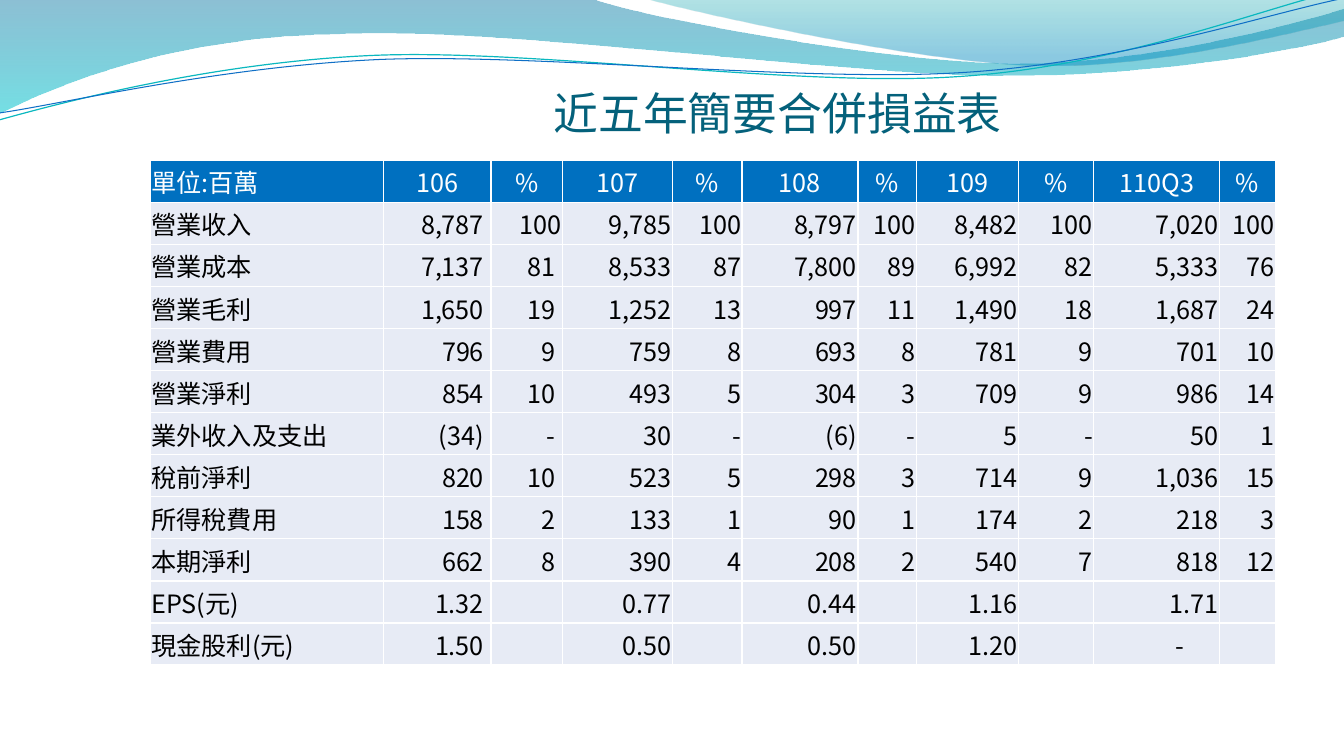
from lxml.etree import SubElement
from pptx import Presentation
from pptx.dml.color import RGBColor
from pptx.enum.text import MSO_ANCHOR, PP_ALIGN
from pptx.oxml.ns import qn
from pptx.util import Emu, Inches, Pt

# Slide and its grid of 13.33 columns by 7.5 rows
deck = Presentation()
deck.slide_width, deck.slide_height = Inches(13.33), Inches(7.5)
unit = deck.slide_height / 7.5
slide = deck.slides.add_slide(deck.slide_layouts[6])
shapes = slide.shapes
FONT = "Noto Sans CJK SC"
INK = {"title": "04617B", "head": "0070C0", "body": "E7EBF5", "white": "FFFFFF",
       "black": "000000", "deep": "0074A1", "aqua": "00C6CF", "teal": "00A1A9",
       "sky": "008BBF", "cyan": "0AB8BF", "blue": "0F6FC6"}
INK = {name: RGBColor.from_string(code) for name, code in INK.items()}


def trace(start, steps, close):
    """Draw an outline; a step of six numbers is a Bezier curve, of two a line."""
    spots = [(step[i], step[i + 1]) for step in [start, *steps] for i in range(0, len(step), 2)]
    spots = [(round(x * unit), round(y * unit)) for x, y in spots]
    pen = shapes.build_freeform(*spots[0])
    pen.add_line_segments(spots[1:], close=close)
    form = pen.convert_to_shape()
    form.shadow.inherit = False
    # Join each three segments of a curve into one Bezier
    legs = form._element.spPr.iter(qn("a:lnTo"))
    legs = iter(list(legs))
    for step in steps:
        bend = next(legs)
        if len(step) == 6:
            bend.tag = qn("a:cubicBezTo")
            for _ in range(2):
                leg = next(legs)
                bend.append(leg[0])
                leg.getparent().remove(leg)
    return form


def write(frame, text, size, color, align):
    para = frame.paragraphs[0]
    para.text, para.alignment = text, align
    para.font.name, para.font.size = FONT, Pt(size)
    para.font.color.rgb = color
    SubElement(para.font._element, qn("a:ea"), typeface=FONT)


# Shaded waves: outline, then stops of colour, place and opacity
waves = [
    ((0, 0), [(5.87, -0.01), (6.34, 0.17, 8.85, 0.63, 10.11, 0.63),
              (11.38, 0.63, 12.78, 0.26, 13.33, 0.09), (13.35, 0.36),
              (13.11, 0.44, 11.6, 0.76, 9.94, 0.75), (8.29, 0.75, 5.09, 0.28, 3.43, 0.34),
              (1.72, 0.36, 0.61, 0.83, -0.01, 1.13)],
     [("deep", 0, 45), ("aqua", 1, 55)]),
    ((6.39, -0.01), [(6.79, 0.11, 9.09, 0.62, 10.25, 0.65),
                     (11.41, 0.69, 12.82, 0.32, 13.33, 0.21), (13.33, 0)],
     [("teal", 0, 30), ("sky", 0.8, 45)]),
]
for start, steps, stops in waves:
    wave = trace(start, steps, True)
    wave.line.fill.background()
    wave.fill.gradient()
    wave.fill.gradient_angle = 270
    for stop, (name, place, alpha) in zip(wave.fill.gradient_stops, stops):
        stop.color.rgb, stop.position = INK[name], place
    for tint, (_, _, alpha) in zip(wave._element.spPr.iter(qn("a:srgbClr")), stops):
        SubElement(tint, qn("a:alpha"), val=str(alpha * 1000))

# Thin wave lines
lines = [
    ((-0.01, 1.19), [(0.64, 1.01, 2.11, 0.62, 3.69, 0.55), (5.27, 0.48, 7.9, 0.87, 9.5, 0.76),
                     (11.1, 0.66, 12.52, 0.08, 13.31, -0.1)], "cyan", 0.85),
    ((0, 1.12), [(0.63, 1.03, 2.18, 0.66, 3.78, 0.59), (5.37, 0.53, 7.96, 0.82, 9.55, 0.72),
                 (11.15, 0.62, 12.55, 0.14, 13.34, -0.02)], "blue", 0.75),
]
for start, steps, name, width in lines:
    curve = trace(start, steps, False)
    curve.fill.background()
    curve.line.color.rgb, curve.line.width = INK[name], Pt(width)

# Title
box = shapes.add_textbox(*(Emu(round(n * unit)) for n in (2.84, 0.68, 9.75, 0.7)))
frame = box.text_frame
frame.word_wrap, frame.vertical_anchor = True, MSO_ANCHOR.BOTTOM
frame.margin_left = frame.margin_right = frame.margin_bottom = 0
write(frame, "近五年簡要合併損益表", 32, INK["title"], PP_ALIGN.CENTER)

# Income table
rows = [row.split("|") for row in """單位:百萬|106|%|107|%|108|%|109|%|110Q3|%
營業收入|8,787|100|9,785|100|8,797|100|8,482|100|7,020|100
營業成本|7,137|81|8,533|87|7,800|89|6,992|82|5,333|76
營業毛利|1,650|19|1,252|13|997|11|1,490|18|1,687|24
營業費用|796|9|759|8|693|8|781|9|701|10
營業淨利|854|10|493|5|304|3|709|9|986|14
業外收入及支出|(34)|-|30|-|(6)|-|5|-|50|1
稅前淨利|820|10|523|5|298|3|714|9|1,036|15
所得稅費用|158|2|133|1|90|1|174|2|218|3
本期淨利|662|8|390|4|208|2|540|7|818|12
EPS(元)|1.32||0.77||0.44||1.16||1.71|
現金股利(元)|1.50||0.50||0.50||1.20||-|""".split("\n")]
spans = [2.31, 1.07, 0.71, 1.09, 0.69, 1.15, 0.58, 1.01, 0.75, 1.25, 0.55]
high = 5.01 / len(rows)
grid = shapes.add_table(len(rows), len(spans), *(
    Emu(round(n * unit)) for n in (1.49, 1.59, sum(spans), 5.01))).table
for col, span in zip(grid.columns, spans):
    col.width = Emu(round(span * unit))
for r, row in enumerate(rows):
    grid.rows[r].height = Emu(round(high * unit))
    for c, text in enumerate(row):
        cell = grid.cell(r, c)
        cell.vertical_anchor = MSO_ANCHOR.MIDDLE
        cell.margin_left = cell.margin_top = cell.margin_right = Inches(0.01)
        cell.margin_bottom = 0
        # Numbers of the first year stand a little off the right edge
        if r and c in (1, 2) and text != "100":
            cell.margin_right = Inches(0.07)
        if r == len(rows) - 1 and text == "-":
            cell.margin_right = Inches(0.35)
        for side in ("lnL", "lnR", "lnT", "lnB"):
            edge = SubElement(cell._tc.get_or_add_tcPr(), qn("a:" + side), w=str(Pt(1)))
            paint = SubElement(edge, qn("a:solidFill"))
            SubElement(paint, qn("a:srgbClr"), val=str(INK["white"]))
        cell.fill.solid()
        cell.fill.fore_color.rgb = INK["body" if r else "head"]
        align = PP_ALIGN.LEFT if c == 0 else PP_ALIGN.RIGHT if r else PP_ALIGN.CENTER
        write(cell.text_frame, text, 18, INK["black" if r else "white"], align)

deck.save("out.pptx")
